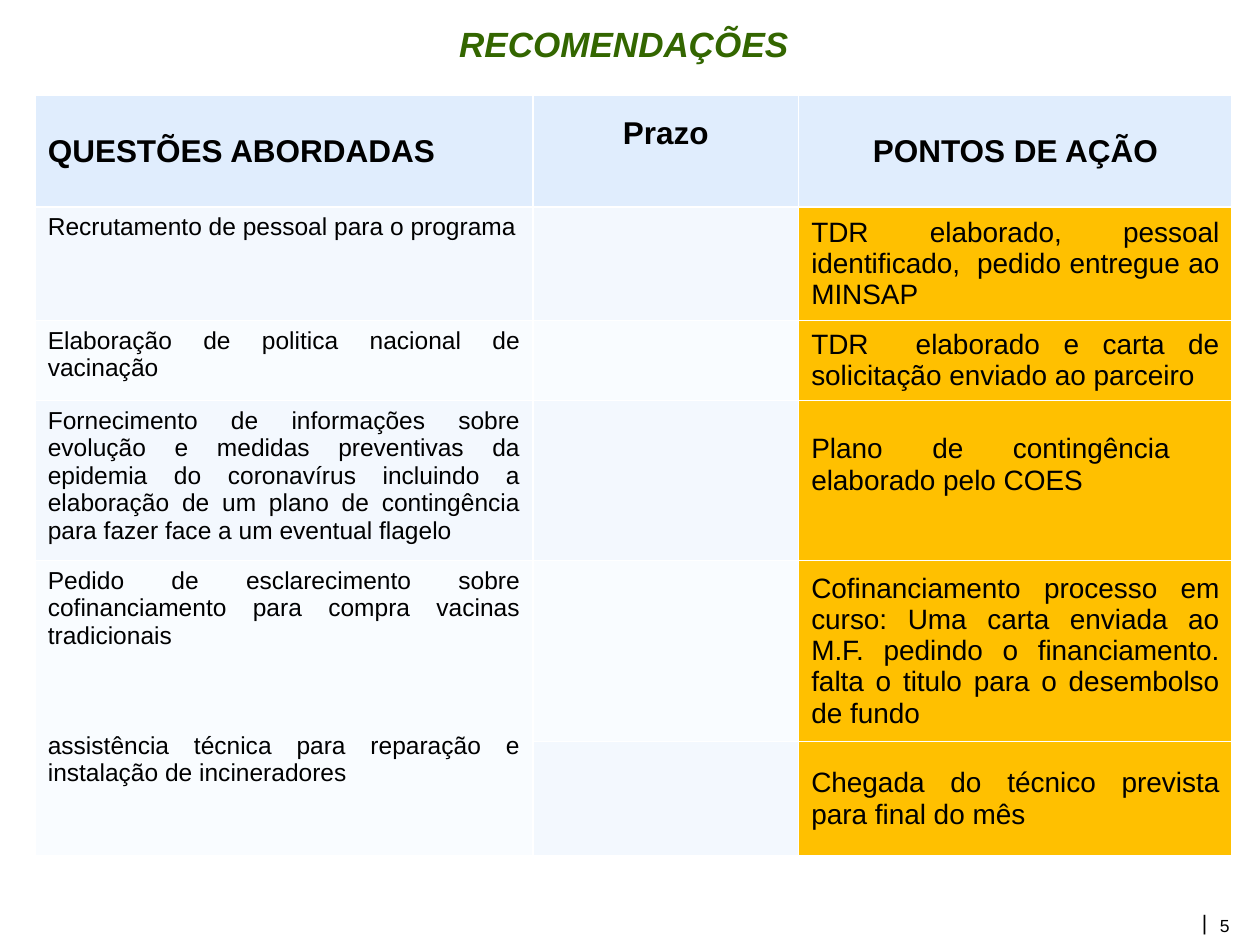
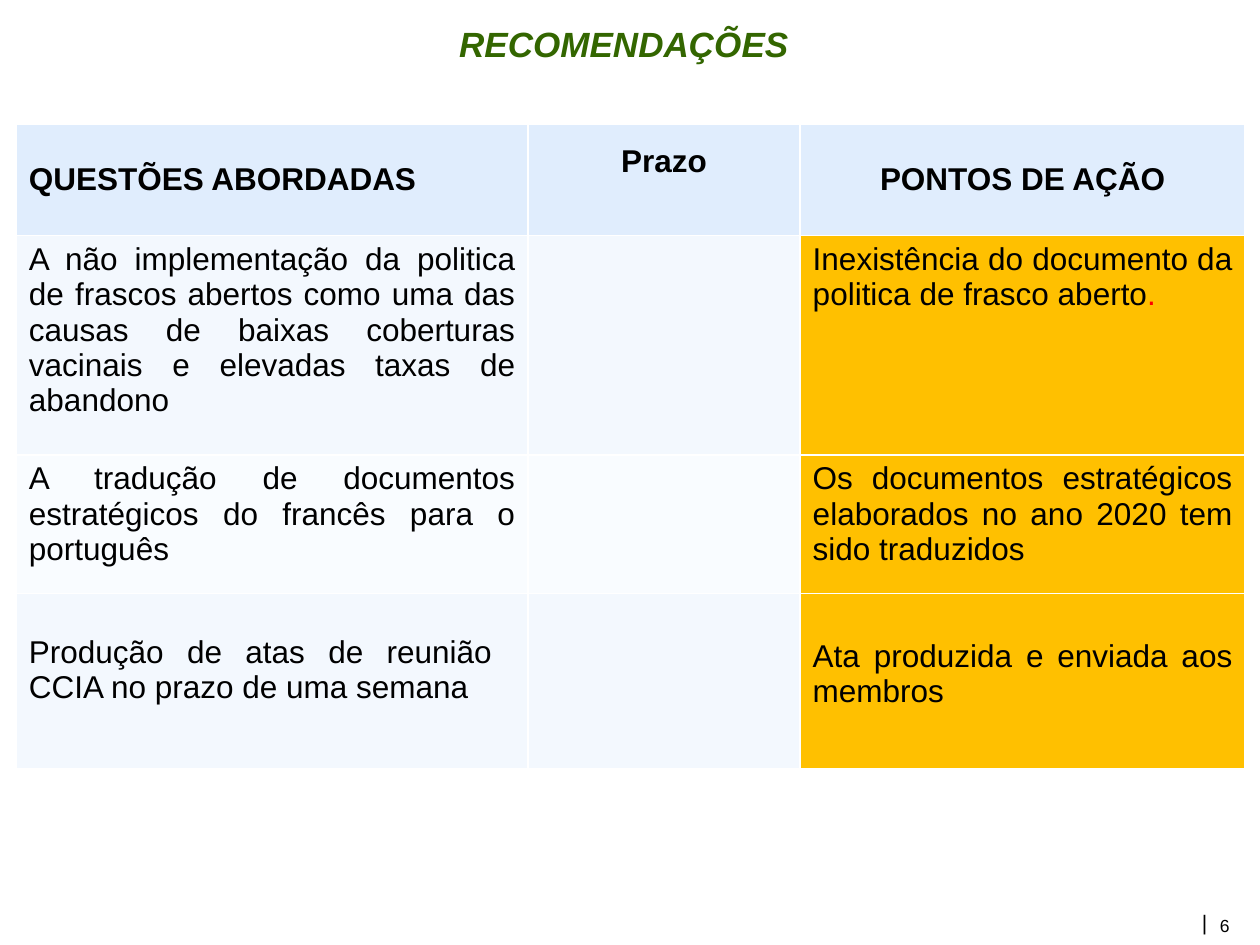
from dataclasses import dataclass

from pptx import Presentation
from pptx.dml.color import RGBColor
from pptx.enum.text import MSO_ANCHOR as Anchor, MSO_AUTO_SIZE as AutoSize, PP_ALIGN as Align
from pptx.util import Cm, Pt

BLACK = RGBColor(0x00, 0x00, 0x00)
RED = RGBColor(0xFF, 0x00, 0x00)
GREEN = RGBColor(0x33, 0x66, 0x00)
HEADER_BLUE = RGBColor(0xE0, 0xED, 0xFD)
BAND_BLUES = (RGBColor(0xF3, 0xF8, 0xFE), RGBColor(0xF9, 0xFC, 0xFF))
AMBER = RGBColor(0xFF, 0xC0, 0x00)
FONT = "Arial"
MARGIN = 0.13
TITLE_ONLY = 5


@dataclass
class Entry:
    text: str
    size: int = 18
    anchor: Anchor = Anchor.TOP
    pad_top: float = 0
    pad_bottom: float = 0
    red_end: str = ""


def issue(text, size=14, **options):
    return Entry(text, size, **options)


def action(text, size=16, anchor=Anchor.MIDDLE, **options):
    return Entry(text, size, anchor, **options)


STAFF_ROWS = [
    (issue("Recrutamento de pessoal para o programa"),
     action("TDR elaborado, pessoal identificado,  pedido entregue ao MINSAP")),
    (issue("Elaboração de politica nacional de vacinação"),
     action("TDR  elaborado e carta de solicitação enviado ao parceiro")),
    (issue("Fornecimento de informações sobre evolução e medidas preventivas da epidemia "
           "do coronavírus incluindo a elaboração de um plano de contingência para fazer "
           "face a um eventual flagelo"),
     action("Plano de contingência  elaborado pelo COES", pad_bottom=0.64)),
    (issue("Pedido de esclarecimento sobre cofinanciamento para compra vacinas tradicionais\n"
           "assistência técnica para reparação e instalação de incineradores"),
     action("Cofinanciamento processo em curso: Uma carta enviada ao M.F. pedindo o "
            "financiamento. falta o titulo para o desembolso de fundo")),
    (None, action("Chegada do técnico prevista para final do mês")),
]

POLICY_ROWS = [
    (Entry("A não implementação da politica de frascos abertos como uma das causas de "
           "baixas coberturas vacinais e elevadas taxas de abandono"),
     Entry("Inexistência do documento da politica de frasco aberto", red_end=".")),
    (Entry("A tradução de documentos estratégicos do francês para o português"),
     Entry("Os documentos estratégicos elaborados no ano 2020 tem sido traduzidos")),
    (Entry("Produção de atas de reunião  CCIA no prazo de uma semana", pad_top=0.71),
     Entry("Ata produzida e enviada aos membros", pad_top=0.78)),
]


def write(para, text, size=18, color=BLACK, bold=False, italic=False,
          align=Align.LEFT, before=0):
    para.alignment = align
    if before:
        para.space_before = Pt(before)
    span = para.add_run()
    span.text = text
    font = span.font
    font.name, font.size, font.bold, font.italic = FONT, Pt(size), bold, italic
    font.color.rgb = color


def paint(cell, color):
    cell.fill.solid()
    cell.fill.fore_color.rgb = color


def fill_header(table):
    headings = (("QUESTÕES ABORDADAS", Align.JUSTIFY, 0),
                ("Prazo", Align.CENTER, 0.73),
                ("PONTOS DE AÇÃO", Align.CENTER, 0))
    for cell, (text, align, pad_bottom) in zip(table.rows[0].cells, headings):
        paint(cell, HEADER_BLUE)
        cell.vertical_anchor = Anchor.MIDDLE
        cell.margin_bottom = Cm(MARGIN + pad_bottom)
        write(cell.text_frame.paragraphs[0], text, bold=True, align=align)


def fill_entry(cell, entry):
    cell.vertical_anchor = entry.anchor
    cell.margin_top = Cm(MARGIN + entry.pad_top)
    cell.margin_bottom = Cm(MARGIN + entry.pad_bottom)
    frame = cell.text_frame
    for index, text in enumerate(entry.text.split("\n")):
        para = frame.add_paragraph() if index else frame.paragraphs[0]
        write(para, text, entry.size, align=Align.JUSTIFY, before=47 if index else 0)
    if entry.red_end:
        write(para, entry.red_end, entry.size, RED, align=Align.JUSTIFY)


def add_action_table(page, rows, left, top, widths, heights):
    table = page.shapes.add_table(len(heights), len(widths), Cm(left), Cm(top),
                                  Cm(sum(widths)), Cm(sum(heights))).table
    for column, width in zip(table.columns, widths):
        column.width = Cm(width)
    for row, height in zip(table.rows, heights):
        row.height = Cm(height)
    fill_header(table)
    for number, (question, answer) in enumerate(rows, 1):
        band = BAND_BLUES[(number - 1) % 2]
        for column, color in enumerate((band, band, AMBER)):
            paint(table.cell(number, column), color)
        if question:
            fill_entry(table.cell(number, 0), question)
        else:
            table.cell(number - 1, 0).merge(table.cell(number, 0))
        fill_entry(table.cell(number, 2), answer)


def add_title(page, text):
    title = page.shapes.title
    title.left, title.top, title.width, title.height = Cm(0.33), Cm(0.33), Cm(24.49), Cm(1.6)
    frame = title.text_frame
    frame.vertical_anchor = Anchor.TOP
    frame.auto_size = AutoSize.NONE
    write(frame.paragraphs[0], text, 20, GREEN, bold=True, italic=True, align=Align.CENTER)


def add_label(page, text, left, top, width, height, **style):
    box = page.shapes.add_textbox(Cm(left), Cm(top), Cm(width), Cm(height))
    frame = box.text_frame
    frame.word_wrap = False
    frame.margin_left = frame.margin_right = frame.margin_top = frame.margin_bottom = 0
    write(frame.paragraphs[0], text, **style)


def add_page(deck, number):
    page = deck.slides.add_slide(deck.slide_layouts[TITLE_ONLY])
    add_label(page, str(number), 24.59, 18.44, 0.53, 0.43, size=10)
    add_label(page, "|", 24.23, 18.34, 0.1, 0.53, size=12, align=Align.RIGHT)
    add_title(page, "RECOMENDAÇÕES")
    return page


def main():
    deck = Presentation()
    deck.slide_width, deck.slide_height = Cm(25.4), Cm(19.05)
    add_action_table(add_page(deck, 5), STAFF_ROWS, 0.71, 1.93,
                     (10.03, 5.36, 8.74), (2.24, 2.21, 1.57, 3.12, 3.53, 2.31))
    add_action_table(add_page(deck, 6), POLICY_ROWS, 0.33, 2.51,
                     (10.31, 5.49, 8.97), (2.24, 4.42, 2.79, 3.53))
    deck.save("out.pptx")


if __name__ == "__main__":
    main()
